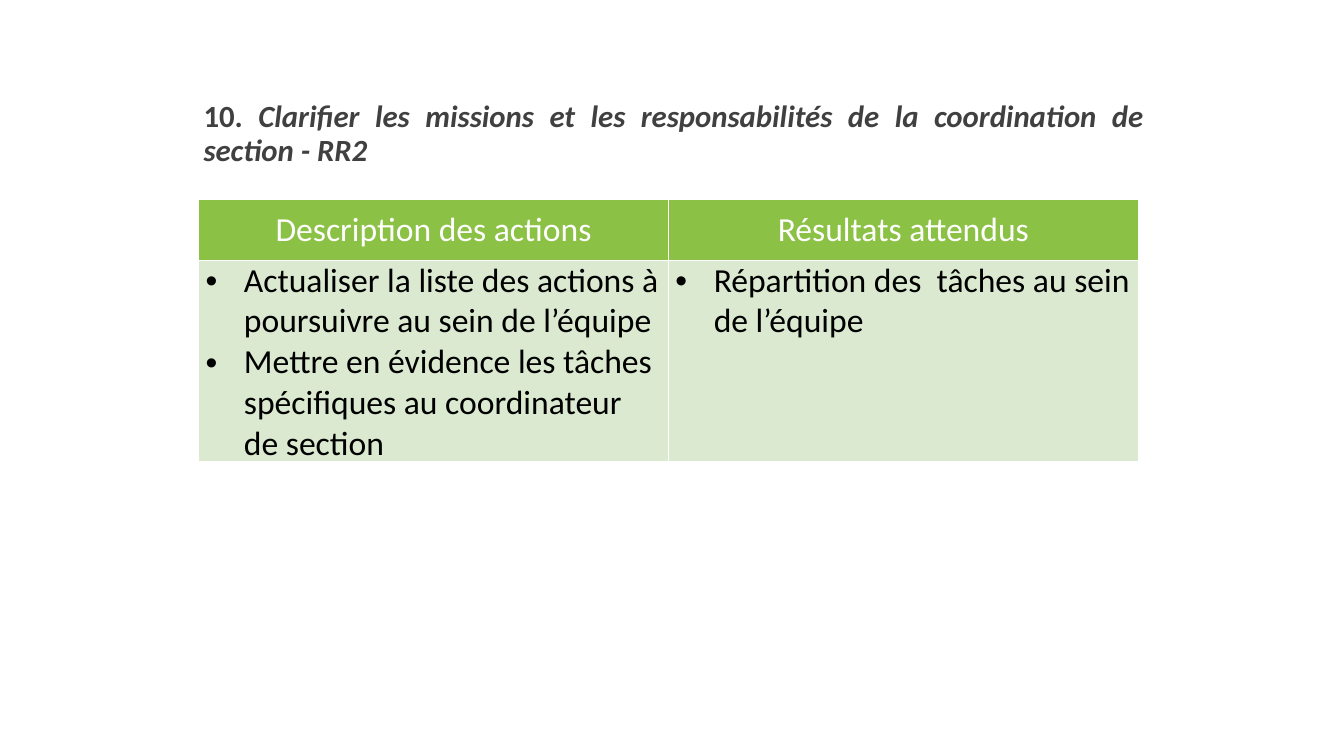
"""Build the slide on clarifying the section coordination's missions."""
import pptx
import pptx.util
import pptx.dml.color
import pptx.enum.text
from lxml import etree
from pptx.oxml.ns import qn

TITLE = [
    ("10. ", {"bold": True}),
    ("Clarifier les missions et les responsabilités de la coordination de section - RR2",
     {"bold": True, "italic": True}),
]
HEADERS = ["Description des actions", "Résultats attendus"]
BODY = [
    ["Actualiser la liste des actions à poursuivre au sein de l’équipe",
     "Mettre en évidence les tâches spécifiques au coordinateur de section"],
    ["Répartition des  tâches au sein de l’équipe"],
]
COLORS = {"title": "404040", "header": "8BC145", "body": "DAE9CF",
          "light": "FFFFFF", "dark": "000000"}
TITLE_BOX = (1.92, 0.75, 9.52, 1.17)
TABLE_LEFT, TABLE_TOP = 1.97, 1.98
COL_W, ROW_H = 4.66, [0.6, 2]
INDENT = 0.38
ALIGN = pptx.enum.text.PP_ALIGN
ANCHOR = pptx.enum.text.MSO_ANCHOR
Inches, Pt = pptx.util.Inches, pptx.util.Pt
CELL_STYLES = {
    "header": {"margin_left": Inches(0.1), "margin_right": Inches(0.1),
               "margin_top": Inches(0.1), "margin_bottom": Inches(0.1)},
    "body": {"margin_left": Inches(0.07), "margin_right": Inches(0.07),
             "margin_top": 0, "margin_bottom": 0},
}


def rgb(name):
    return pptx.dml.color.RGBColor.from_string(COLORS[name])


def add_run(p, text, size, color, **style):
    r = p.add_run()
    r.text = text
    for key, value in {"name": "Calibri", "size": Pt(size), **style}.items():
        setattr(r.font, key, value)
    r.font.color.rgb = rgb(color)


def add_bullet(p):
    pPr = p._p.get_or_add_pPr()
    pPr.set("marL", str(Inches(INDENT)))
    pPr.set("indent", str(-Inches(INDENT)))
    etree.SubElement(pPr, qn("a:buFont")).set("typeface", "Arial")
    etree.SubElement(pPr, qn("a:buChar")).set("char", "•")


def add_borders(cell):
    tcPr = cell._tc.get_or_add_tcPr()
    for i, side in enumerate(("lnL", "lnR", "lnT", "lnB")):
        ln = etree.Element(qn("a:" + side), w=str(Pt(1)))
        fill = etree.SubElement(ln, qn("a:solidFill"))
        etree.SubElement(fill, qn("a:srgbClr")).set("val", COLORS["light"])
        tcPr.insert(i, ln)


def fill_cell(cell, kind, lines):
    for key, value in CELL_STYLES[kind].items():
        setattr(cell, key, value)
    cell.fill.solid()
    cell.fill.fore_color.rgb = rgb(kind)
    add_borders(cell)
    tf = cell.text_frame
    for i, line in enumerate(lines):
        p = tf.add_paragraph() if i else tf.paragraphs[0]
        if kind == "header":
            p.alignment = ALIGN.CENTER
        else:
            add_bullet(p)
        add_run(p, line, 24, "light" if kind == "header" else "dark")


def main():
    prs = pptx.Presentation()
    prs.slide_width, prs.slide_height = Inches(13.33), Inches(7.5)
    s = prs.slides.add_slide(prs.slide_layouts[6])

    tf = s.shapes.add_textbox(*map(Inches, TITLE_BOX)).text_frame
    tf.word_wrap = True
    tf.vertical_anchor = ANCHOR.MIDDLE
    p = tf.paragraphs[0]
    p.alignment, p.line_spacing = ALIGN.JUSTIFY, 0.9
    for text, style in TITLE:
        add_run(p, text, 22, "title", **style)

    box = (TABLE_LEFT, TABLE_TOP, COL_W * len(HEADERS), sum(ROW_H))
    table = s.shapes.add_table(len(ROW_H), len(HEADERS), *map(Inches, box)).table
    for row, height in zip(table.rows, ROW_H):
        row.height = Inches(height)
    for c, (header, lines) in enumerate(zip(HEADERS, BODY)):
        table.columns[c].width = Inches(COL_W)
        fill_cell(table.cell(0, c), "header", [header])
        fill_cell(table.cell(1, c), "body", lines)

    prs.save("out.pptx")


if __name__ == "__main__":
    main()
